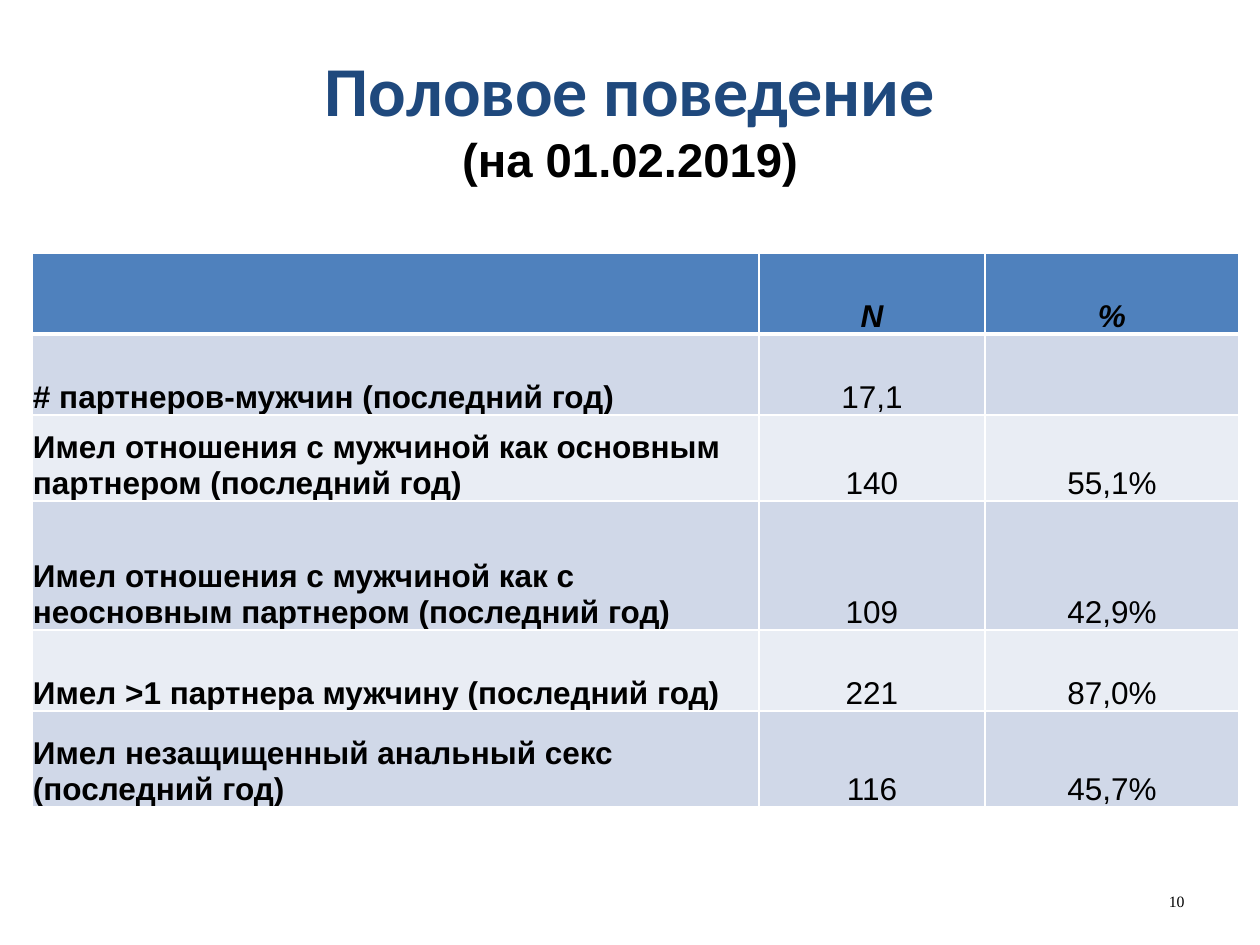
from lxml.etree import SubElement
from pptx import Presentation
from pptx.dml.color import RGBColor
from pptx.enum.text import MSO_ANCHOR, PP_ALIGN
from pptx.oxml.ns import qn
from pptx.util import Emu, Pt

PX = 914400 // 126
NAVY = RGBColor(0x1F, 0x49, 0x7D)
BLACK = RGBColor(0, 0, 0)
WHITE = RGBColor(0xFF, 0xFF, 0xFF)
HEADER = RGBColor(0x4F, 0x81, 0xBD)
BANDS = [RGBColor(0xE9, 0xED, 0xF4), RGBColor(0xD0, 0xD8, 0xE8)]

TITLE = "Половое поведение"
SUBTITLE = "(на 01.02.2019)"
PAGE = "10"
ROWS = [
    ("", "N", "%"),
    ("# партнеров-мужчин (последний год)", "17,1", ""),
    ("Имел отношения с мужчиной как основным партнером (последний год)", "140", "55,1%"),
    ("Имел отношения с мужчиной как с неосновным партнером (последний год)", "109", "42,9%"),
    ("Имел >1 партнера мужчину (последний год)", "221", "87,0%"),
    ("Имел незащищенный анальный секс (последний год)", "116", "45,7%"),
]
COL_WIDTHS = [727, 226, 254]
ROW_HEIGHTS = [81, 81, 86, 129, 81, 96]


def px(*values):
    return [Emu(v * PX) for v in values]


def add_run(p, text, size, font, color=BLACK, bold=False, italic=False):
    r = p.add_run()
    r.text = text
    f = r.font
    f.size, f.name, f.bold, f.italic = Pt(size), font, bold, italic
    f.color.rgb = color


def add_text_box(slide, *box):
    tf = slide.shapes.add_textbox(*px(*box)).text_frame
    tf.word_wrap = True
    tf.vertical_anchor = MSO_ANCHOR.MIDDLE
    return tf


def set_border(cell, side, width):
    ln = SubElement(cell._tc.get_or_add_tcPr(), qn(f"a:ln{side}"), w=str(Pt(width)))
    fill = SubElement(ln, qn("a:solidFill"))
    SubElement(fill, qn("a:srgbClr"), val=str(WHITE))


def fill_cell(cell, text, row, col):
    header = row == 0
    widths = {"L": 1, "R": 1, "T": 3 if row == 1 else 1, "B": 3 if header else 1}
    for side, width in widths.items():
        set_border(cell, side, width)
    cell.fill.solid()
    cell.fill.fore_color.rgb = HEADER if header else BANDS[row % 2]
    cell.vertical_anchor = MSO_ANCHOR.BOTTOM
    cell.margin_left = cell.margin_right = cell.margin_top = Emu(PX)
    cell.margin_bottom = 0
    p = cell.text_frame.paragraphs[0]
    p.alignment = PP_ALIGN.CENTER if col else PP_ALIGN.LEFT
    if text:
        add_run(p, text, 18, "Arial", bold=header or col == 0, italic=header)


prs = Presentation()
prs.slide_width, prs.slide_height = px(1260, 945)
s = prs.slides.add_slide(prs.slide_layouts[6])

# Title; the second line sits slightly left of centre
tf = add_text_box(s, 63, 38, 1134, 157)
p = tf.paragraphs[0]
p.alignment = PP_ALIGN.CENTER
add_run(p, TITLE, 40, "Calibri", NAVY, bold=True)
p = tf.add_paragraph()
p.alignment = PP_ALIGN.CENTER
p._p.get_or_add_pPr().set("indent", str(-26 * PX))
add_run(p, SUBTITLE, 27, "Arial", bold=True)

# Table
table = s.shapes.add_table(
    len(ROWS), len(COL_WIDTHS), *px(32, 253, sum(COL_WIDTHS), sum(ROW_HEIGHTS))
).table
for column, width in zip(table.columns, px(*COL_WIDTHS)):
    column.width = width
for row, height in zip(table.rows, px(*ROW_HEIGHTS)):
    row.height = height
for i, texts in enumerate(ROWS):
    for j, text in enumerate(texts):
        fill_cell(table.cell(i, j), text, i, j)

# Page number
p = add_text_box(s, 903, 876, 294, 50).paragraphs[0]
p.alignment = PP_ALIGN.RIGHT
add_run(p, PAGE, 9, "Times New Roman")

prs.save("out.pptx")
